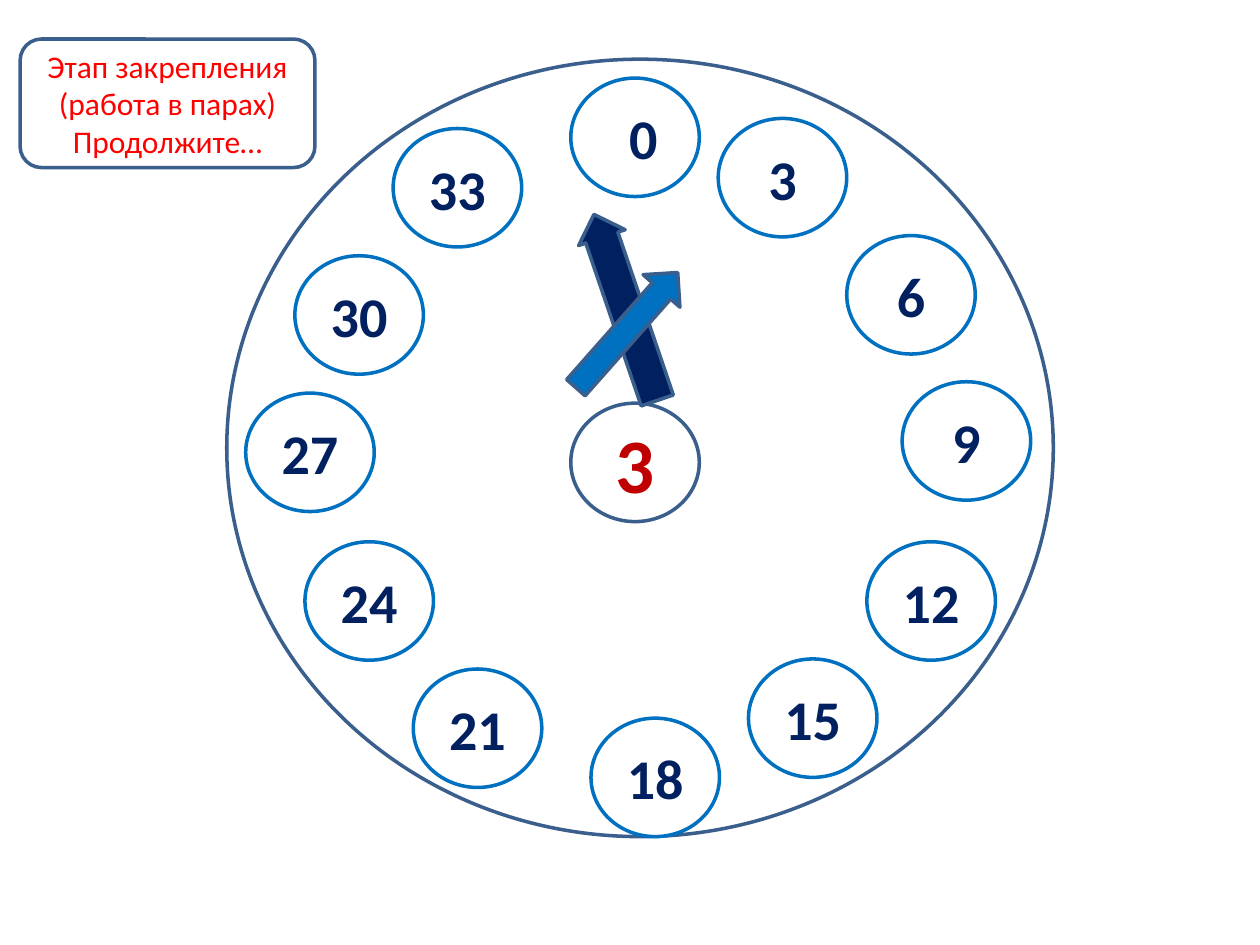
from pptx import Presentation
from pptx.dml.color import RGBColor
from pptx.enum.shapes import MSO_SHAPE as Shape
from pptx.enum.text import MSO_ANCHOR as Anchor, PP_ALIGN as Align
from pptx.util import Inches, Pt

# Content: the dial numbers with the top left corner of their circles
DIAL = [
    (0, 4.53, 0.62), (3, 5.7, 0.94), (6, 6.72, 1.87), (9, 7.16, 3.03),
    (12, 6.88, 4.3), (15, 5.94, 5.23), (18, 4.69, 5.7), (21, 3.28, 5.31),
    (24, 2.42, 4.3), (27, 1.95, 3.12), (30, 2.34, 2.03), (33, 3.12, 1.02),
]
FACTOR = "3"
TASK = ["Этап закрепления", "(работа в парах)", "Продолжите…"]
# Hands: left, top, width, height, rotation, shaft share, colour
HANDS = [
    (4.77, 1.66, 0.39, 1.56, 341.2, 0.69, "002060"),
    (4.78, 2.01, 0.39, 1.22, 41.5, 0.5, "0070C0"),
]
CIRCLE = (1.02, 0.94)
WHITE, BLUE, NAVY, STEEL = "FFFFFF", "0070C0", "002060", "3A5F8C"


def rgb(value):
    return RGBColor.from_string(value)


def add_shape(kind, left, top, width, height, fill=WHITE, line=STEEL):
    shape = page.shapes.add_shape(
        kind, Inches(left), Inches(top), Inches(width), Inches(height))
    shape.shadow.inherit = False
    shape.fill.solid()
    shape.fill.fore_color.rgb = rgb(fill)
    shape.line.color.rgb = rgb(line)
    shape.line.width = Pt(2)
    return shape


def write(shape, lines, size=18, color=NAVY, bold=False):
    frame = shape.text_frame
    frame.word_wrap = True
    frame.vertical_anchor = Anchor.MIDDLE
    for index, text in enumerate(lines):
        para = frame.add_paragraph() if index else frame.paragraphs[0]
        para.alignment = Align.CENTER
        span = para.add_run()
        span.text = text
        span.font.name = "Calibri"
        span.font.size = Pt(size)
        span.font.bold = bold
        span.font.color.rgb = rgb(color)


deck = Presentation()
deck.slide_width, deck.slide_height = Inches(10), Inches(7.5)
page = deck.slides.add_slide(deck.slide_layouts[6])

# Clock face and its numbers
add_shape(Shape.OVAL, 1.8, 0.47, 6.56, 6.17)
for number, left, top in DIAL:
    circle = add_shape(Shape.OVAL, left, top, *CIRCLE, line=BLUE)
    write(circle, [str(number)], size=32, bold=True)
    if number == 0:  # the zero sits a little right of centre
        circle.text_frame.margin_left = Inches(0.23)

# Factor in the middle
centre = add_shape(Shape.OVAL, 4.53, 3.2, *CIRCLE)
write(centre, [FACTOR], size=44, color="C00000", bold=True)

# Clock hands
for left, top, width, height, rotation, shaft, color in HANDS:
    hand = add_shape(Shape.UP_ARROW, left, top, width, height, fill=color)
    hand.rotation = rotation
    hand.adjustments[0] = shaft

# Task label
label = add_shape(Shape.ROUNDED_RECTANGLE, 0.16, 0.31, 2.34, 1.02)
write(label, TASK, color="FF0000")

deck.save("out.pptx")
